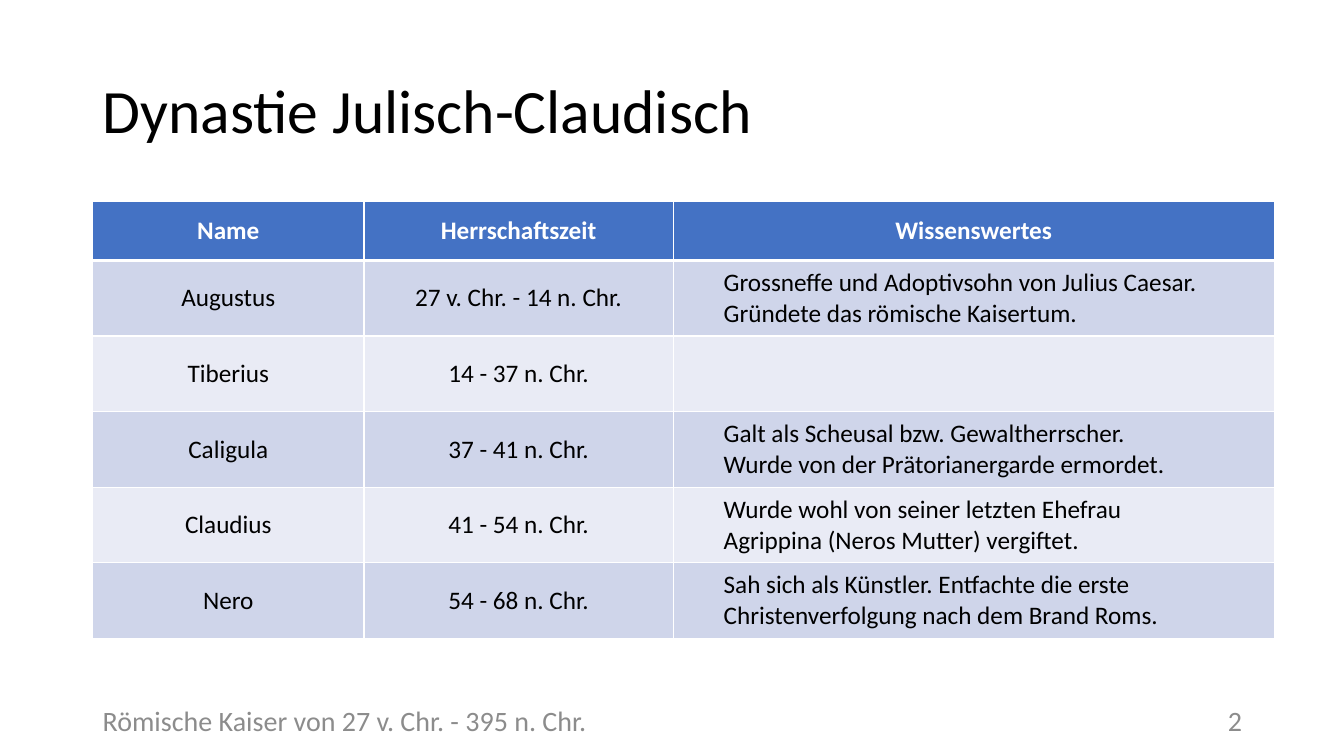
from dataclasses import dataclass

from lxml import etree
from pptx import Presentation
from pptx.dml.color import RGBColor
from pptx.enum.text import MSO_ANCHOR, PP_ALIGN
from pptx.oxml.ns import qn
from pptx.slide import Slide
from pptx.table import Table, _Cell
from pptx.text.text import _Paragraph
from pptx.util import Pt

LEFT, CENTER, RIGHT = PP_ALIGN.LEFT, PP_ALIGN.CENTER, PP_ALIGN.RIGHT
MIDDLE = MSO_ANCHOR.MIDDLE

FONT = "Calibri"
BLACK, WHITE, GREY = "000000", "FFFFFF", "8C8C8C"
HEADER_FILL = "4472C4"
BAND_FILLS = ("CFD5EA", "E9EBF5")

TABLE_LEFT, TABLE_TOP = 66.24, 144
COLUMN_WIDTHS = (193.7, 221, 429.2)
HEADER_HEIGHT, ROW_HEIGHT = 42, 54
NOTE_INDENT = 36
THIN, THICK = 1, 3


@dataclass(frozen=True)
class Label:
    text: str
    left: float
    top: float
    width: float
    height: float
    size: float
    color: str
    align: PP_ALIGN = LEFT
    line_spacing: float = 1.0


@dataclass(frozen=True)
class Emperor:
    name: str
    reign: str
    note: str = ""


LABELS = (
    Label("Dynastie Julisch-Claudisch", 66.24, 28.8, 828, 104.4, 44, BLACK, line_spacing=0.9),
    Label("2", 678.24, 500.4, 216, 28.8, 20, GREY, RIGHT),
    Label("Römische Kaiser von 27 v. Chr. - 395 n. Chr.", 66.24, 500.4, 576, 28.8, 20, GREY),
)
HEADINGS = ("Name", "Herrschaftszeit", "Wissenswertes")
EMPERORS = (
    Emperor("Augustus", "27 v. Chr. - 14 n. Chr.",
            "Grossneffe und Adoptivsohn von Julius Caesar.\nGründete das römische Kaisertum."),
    Emperor("Tiberius", "14 - 37 n. Chr."),
    Emperor("Caligula", "37 - 41 n. Chr.",
            "Galt als Scheusal bzw. Gewaltherrscher.\nWurde von der Prätorianergarde ermordet."),
    Emperor("Claudius", "41 - 54 n. Chr.",
            "Wurde wohl von seiner letzten Ehefrau\nAgrippina (Neros Mutter) vergiftet."),
    Emperor("Nero", "54 - 68 n. Chr.",
            "Sah sich als Künstler. Entfachte die erste\nChristenverfolgung nach dem Brand Roms."),
)


def rgb(color: str) -> RGBColor:
    return RGBColor.from_string(color)


def write(paragraph: _Paragraph, text: str, size: float, color: str,
          align: PP_ALIGN, bold: bool = False) -> None:
    paragraph.text = text
    paragraph.alignment = align
    font = paragraph.font
    font.name, font.size, font.bold = FONT, Pt(size), bold
    font.color.rgb = rgb(color)


def add_label(page: Slide, label: Label) -> None:
    box = page.shapes.add_textbox(Pt(label.left), Pt(label.top), Pt(label.width), Pt(label.height))
    frame = box.text_frame
    frame.word_wrap = True
    frame.vertical_anchor = MIDDLE
    paragraph = frame.paragraphs[0]
    write(paragraph, label.text, label.size, label.color, label.align)
    paragraph.line_spacing = label.line_spacing


def set_borders(cell: _Cell, top: float, bottom: float) -> None:
    properties = cell._tc.get_or_add_tcPr()
    sides = (("a:lnL", THIN), ("a:lnR", THIN), ("a:lnT", top), ("a:lnB", bottom))
    for position, (tag, width) in enumerate(sides):
        line = etree.Element(qn(tag), w=str(Pt(width)))
        fill = etree.SubElement(line, qn("a:solidFill"))
        etree.SubElement(fill, qn("a:srgbClr"), val=WHITE)
        properties.insert(position, line)


def fill_cell(table: Table, row: int, column: int, text: str) -> None:
    is_header = row == 0
    is_note = not is_header and column == len(HEADINGS) - 1
    cell = table.cell(row, column)
    cell.vertical_anchor = MIDDLE
    cell.margin_left = Pt(NOTE_INDENT if is_note else 0)
    cell.margin_right = cell.margin_top = cell.margin_bottom = Pt(0)
    cell.fill.solid()
    cell.fill.fore_color.rgb = rgb(HEADER_FILL if is_header else BAND_FILLS[(row - 1) % 2])
    set_borders(cell, THICK if row == 1 else THIN, THICK if is_header else THIN)
    write(cell.text_frame.paragraphs[0], text, 18, WHITE if is_header else BLACK,
          LEFT if is_note else CENTER, is_header)


def add_emperor_table(page: Slide) -> None:
    rows = [HEADINGS] + [(emperor.name, emperor.reign, emperor.note) for emperor in EMPERORS]
    heights = [HEADER_HEIGHT] + [ROW_HEIGHT] * len(EMPERORS)
    table = page.shapes.add_table(
        len(rows), len(HEADINGS), Pt(TABLE_LEFT), Pt(TABLE_TOP),
        Pt(sum(COLUMN_WIDTHS)), Pt(sum(heights))).table
    for column, width in zip(table.columns, COLUMN_WIDTHS):
        column.width = Pt(width)
    for row, height in zip(table.rows, heights):
        row.height = Pt(height)
    for row_index, texts in enumerate(rows):
        for column_index, text in enumerate(texts):
            fill_cell(table, row_index, column_index, text)


def main() -> None:
    deck = Presentation()
    deck.slide_width, deck.slide_height = Pt(960), Pt(540)
    page = deck.slides.add_slide(deck.slide_layouts[6])

    # Title, page number and footer
    for label in LABELS:
        add_label(page, label)

    # Emperors with their reigns
    add_emperor_table(page)

    deck.save("out.pptx")


if __name__ == "__main__":
    main()
